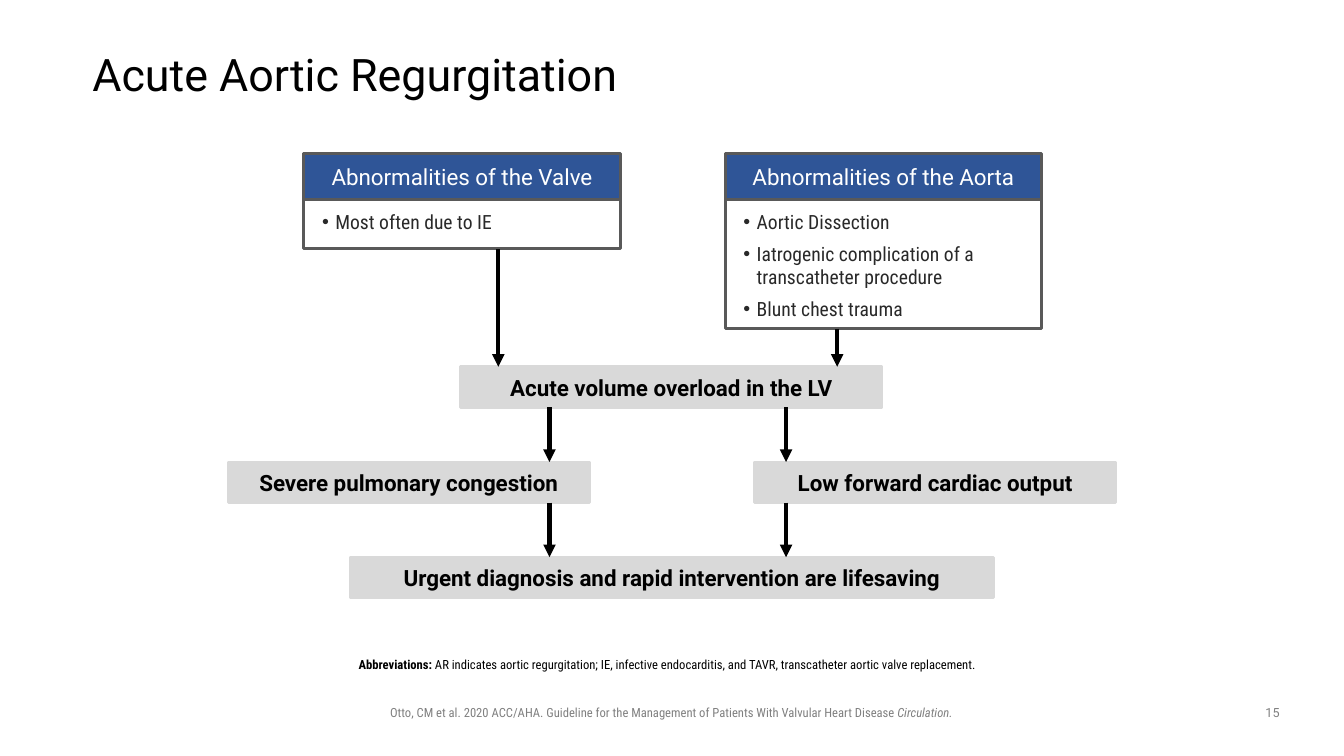
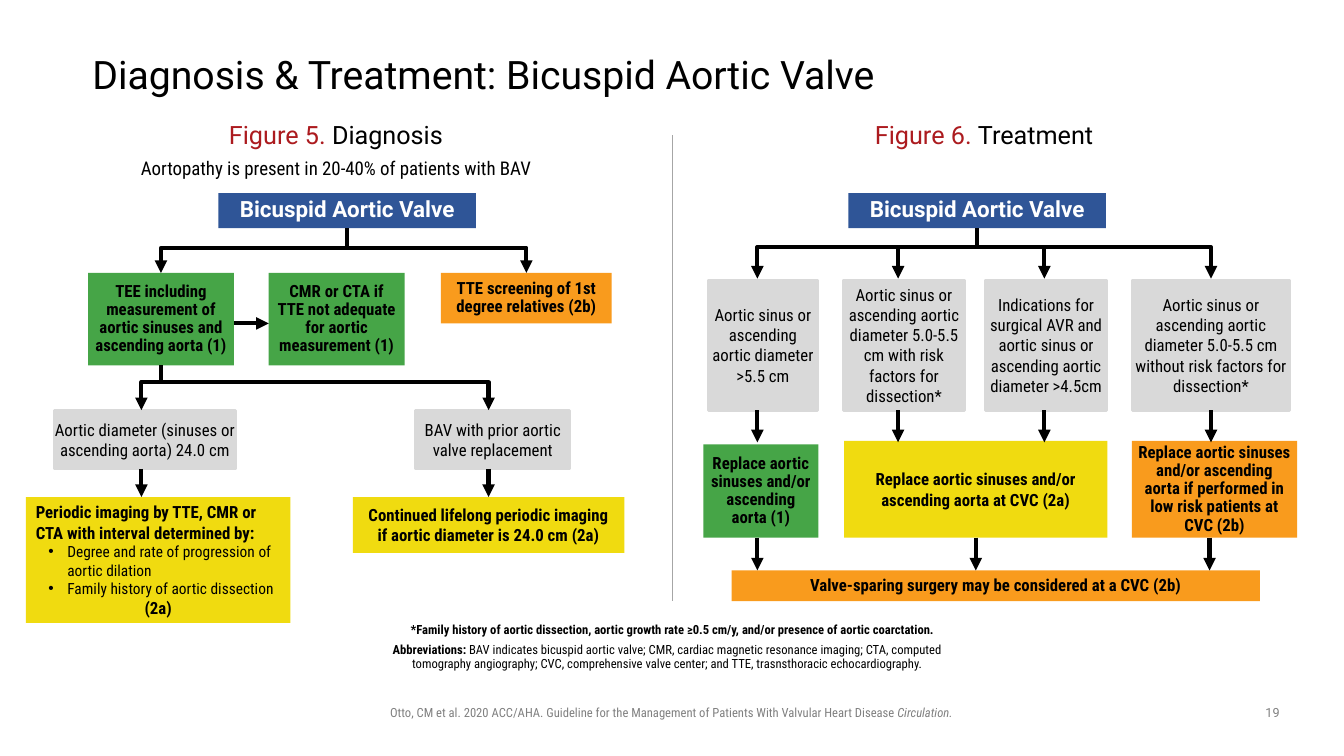
from lxml import etree
from pptx import Presentation
from pptx.dml.color import RGBColor
from pptx.enum.shapes import MSO_CONNECTOR, MSO_SHAPE
from pptx.enum.text import MSO_ANCHOR, PP_ALIGN
from pptx.oxml.ns import qn
from pptx.util import Pt

RECT = MSO_SHAPE.RECTANGLE
STRAIGHT = MSO_CONNECTOR.STRAIGHT
MID, TOP = MSO_ANCHOR.MIDDLE, MSO_ANCHOR.TOP
LEFT, MIDST = PP_ALIGN.LEFT, PP_ALIGN.CENTER

HUES = {
    "black": "000000", "white": "FFFFFF", "ink": "292929", "edge": "595959",
    "gray": "D9D9D9", "rule": "A6A6A6", "foot": "808080", "red": "AC1B1F",
    "blue": "2F5597", "green": "46A547", "gold": "F0DB10", "orange": "F99B1D",
}
WIDE, SLIM = "Roboto", "Roboto Condensed"


def style(name, size, hue="black", bold=False, italic=False, align=MIDST,
          dense=False, after=0, hang=None):
    return {
        "font": {"name": name, "size": Pt(size), "bold": bold, "italic": italic},
        "hue": hue,
        "par": {"alignment": align, "line_spacing": 0.9 if dense else 1.0,
                "space_after": Pt(after)},
        "hang": hang,
    }


STYLES = {
    "title": style(WIDE, 32, align=LEFT, dense=True),
    "long": style(WIDE, 28, align=LEFT, dense=True),
    "foot": style(SLIM, 9, "foot"),
    "cite": style(SLIM, 9, "foot", italic=True),
    "page": style(WIDE, 9, "foot"),
    "note": style(SLIM, 9, dense=True),
    "key": style(SLIM, 9, bold=True),
    "head": style(WIDE, 16, "white", dense=True),
    "root": style(WIDE, 16, "white", bold=True, dense=True),
    "item": style(SLIM, 14, "ink", align=LEFT, after=6, hang=9.5),
    "step": style(WIDE, 16, bold=True),
    "label": style(WIDE, 18, "red"),
    "name": style(WIDE, 18),
    "lead": style(SLIM, 13.5),
    "plain": style(SLIM, 12),
    "bold": style(SLIM, 12, bold=True),
    "tight": style(SLIM, 12, bold=True, dense=True),
    "start": style(SLIM, 12, bold=True, align=LEFT),
    "point": style(SLIM, 11, align=LEFT, hang=13.5),
}


def tint(hue):
    return RGBColor.from_string(HUES[hue])


def assign(thing, vals):
    for key, val in vals.items():
        setattr(thing, key, val)


class Deck:
    def __init__(self):
        self.file = Presentation()
        assign(self.file, {"slide_width": Pt(960), "slide_height": Pt(540)})

    def page(self, title, look, num):
        self.slide = self.file.slides.add_slide(self.file.slide_layouts[6])
        self.forms = self.slide.shapes
        self.boxes = []
        self.text((66, 29, 828, 52), look, title, pad=(0, 0, 0, 0), anchor=MID)
        self.text((228, 500, 503, 18), "foot", (
            "foot",
            "Otto, CM et al. 2020 ACC/AHA. Guideline for the Management of "
            "Patients With Valvular Heart Disease ",
            ("Circulation.", "cite")))
        self.text((894, 500, 30, 19), "page", num)

    def fill(self, frame, look, paras, pad, anchor):
        sides = ("margin_left", "margin_top", "margin_right", "margin_bottom")
        assign(frame, {"word_wrap": True, "vertical_anchor": anchor})
        assign(frame, {side: Pt(val) for side, val in zip(sides, pad)})
        for i, para in enumerate(paras):
            kind, *runs = (look, para) if isinstance(para, str) else para
            par = frame.add_paragraph() if i else frame.paragraphs[0]
            base = STYLES[kind]
            assign(par, base["par"])
            if base["hang"]:
                self.dot(par, base["hang"])
            for run in runs:
                words, kin = (run, kind) if isinstance(run, str) else run
                for j, line in enumerate(words.split("\n")):
                    if j:
                        par.add_line_break()
                    part = par.add_run()
                    part.text = line
                    assign(part.font, STYLES[kin]["font"])
                    part.font.color.rgb = tint(STYLES[kin]["hue"])

    def dot(self, par, hang):
        props = par._p.get_or_add_pPr()
        props.set("marL", str(Pt(22.5)))
        props.set("indent", str(-Pt(hang)))
        etree.SubElement(props, qn("a:buFont")).set("typeface", "Arial")
        etree.SubElement(props, qn("a:buChar")).set("char", "•")

    def text(self, at, look, *paras, pad=(7.2, 3.6, 7.2, 3.6), anchor=TOP):
        box = self.forms.add_textbox(*map(Pt, at))
        self.fill(box.text_frame, look, paras, pad, anchor)

    def note(self, at, words):
        self.text(at, "note", ("note", ("Abbreviations: ", "key"), words),
                  pad=(0, 3.6, 7.2, 3.6))

    def box(self, at, hue, look, *paras, edge=None, pad=(0, 0, 0, 0), anchor=MID):
        box = self.forms.add_shape(RECT, *map(Pt, at))
        box.shadow.inherit = False
        box.fill.solid()
        box.fill.fore_color.rgb = tint(hue)
        if edge:
            self.stroke(box, edge, 2)
        else:
            box.line.fill.background()
        self.fill(box.text_frame, look, paras, pad, anchor)
        self.boxes.append(box)

    def gray(self, at, look, words):
        self.box(at, "gray", look, words, edge="gray")

    def card(self, x, high, head, *items):
        self.box((x, 109.5, 226, 35), "blue", "head", head, edge="edge")
        self.box((x, 142.5, 226, high), "white", "item", *items,
                 edge="edge", pad=(0, 7.2, 0, 0), anchor=TOP)

    def stroke(self, form, hue, width, tip=False):
        form.line.color.rgb = tint(hue)
        form.line.width = Pt(width)
        if tip:
            line = form._element.spPr.find(qn("a:ln"))
            etree.SubElement(line, qn("a:tailEnd")).set("type", "triangle")

    def line(self, x, y, to_x, to_y, hue="black", width=3, tip=True):
        ends = [(Pt(x), Pt(y)), (Pt(to_x), Pt(to_y))]
        link = self.forms.add_connector(STRAIGHT, *ends[0], *ends[1])
        self.stroke(link, hue, width, tip)
        etree.SubElement(link._element.spPr, qn("a:effectLst"))
        for end, join in zip(ends, (link.begin_connect, link.end_connect)):
            self.join(end, join)

    def join(self, end, join):
        for box in self.boxes:
            x, y, w, h = box.left, box.top, box.width, box.height
            sites = ((x + w // 2, y), (x, y + h // 2),
                     (x + w // 2, y + h), (x + w, y + h // 2))
            for site, spot in enumerate(sites):
                if max(abs(a - b) for a, b in zip(end, spot)) < Pt(0.5):
                    join(box, site)
                    return

    def drop(self, y, to_y, *spots):
        for x in spots:
            self.line(x, y, x, to_y)

    def fork(self, x, y, bend, to_y, *spots):
        self.line(x, y, x, bend, tip=False)
        for spot in spots:
            path = self.forms.build_freeform(Pt(x), Pt(bend), scale=1.0)
            path.add_line_segments(
                [(Pt(spot), Pt(bend)), (Pt(spot), Pt(to_y))], close=False)
            form = path.convert_to_shape()
            form.shadow.inherit = False
            form.fill.background()
            self.stroke(form, "black", 3, tip=True)


def acute(deck):
    deck.page("Acute Aortic Regurgitation", "title", "15")
    deck.note((66, 467, 828, 22),
              "AR indicates aortic regurgitation; IE, infective endocarditis, and "
              "TAVR, transcatheter aortic valve replacement.")
    deck.card(217, 35, "Abnormalities of the Valve", "Most often due to IE")
    deck.card(518, 92, "Abnormalities of the Aorta", "Aortic Dissection",
              "Iatrogenic complication of a transcatheter procedure",
              "Blunt chest trauma")
    for x, row, w, words in (
            (329, 0, 301, "Acute volume overload in the LV"),
            (163, 1, 258, "Severe pulmonary congestion"),
            (539, 1, 258, "Low forward cardiac output"),
            (250, 2, 460, "Urgent diagnosis and rapid intervention are lifesaving")):
        deck.gray((x, 262 + 68 * row, w, 29), "step", words)
    deck.drop(178, 262, 356)
    deck.drop(235, 262, 598)
    for y in (291, 359):
        deck.drop(y, y + 39, 392.5, 561.5)


def test(deck):
    deck.text((91, 104.5, 298, 33), "lead",
              "Aortopathy is present in 20-40% of patients with BAV",
              pad=(7.2, 7.2, 7.2, 0))
    deck.box((315, 195, 122, 36), "orange", "tight",
             "TTE screening of 1st degree relatives (2b)")
    deck.box((63, 195, 104, 66), "green", "tight",
             "TEE including measurement of aortic sinuses and ascending aorta (1)")
    deck.box((192, 195, 97, 66), "green", "tight",
             "CMR or CTA if\nTTE not adequate for aortic measurement (1)")
    deck.gray((39, 293, 129, 42), "plain",
              "Aortic diameter (sinuses or ascending aorta) 24.0 cm")
    deck.gray((297, 293, 110, 42), "plain",
              "BAV with prior aortic valve replacement")
    pad = (7.2, 7.2, 7.2, 7.2)
    deck.box((18.5, 355, 189, 90), "gold", "start",
             "Periodic imaging by TTE, CMR or CTA with interval determined by:",
             ("point", "Degree and rate of progression of aortic dilation"),
             ("point", "Family history of aortic dissection"),
             ("bold", "(2a)"), pad=pad)
    deck.box((252, 355, 194, 40), "gold", "bold",
             "Continued lifelong periodic imaging if aortic diameter is 24.0 cm (2a)",
             pad=pad)
    deck.fork(248, 163, 177, 195, 115, 376)
    deck.line(167, 231, 192, 231)
    deck.fork(115, 261, 273, 293, 101, 349)
    deck.drop(335, 355, 101, 349)


def treat(deck):
    for x, w, words in (
            (506, 78, "Aortic sinus or ascending aortic diameter >5.5 cm"),
            (602.5, 86.5, "Aortic sinus or ascending aortic diameter 5.0-5.5 cm "
                          "with risk factors for dissection*"),
            (704, 86.5, "Indications for surgical AVR and aortic sinus or "
                        "ascending aortic diameter >4.5cm"),
            (809, 112, "Aortic sinus or ascending aortic diameter 5.0-5.5 cm "
                       "without risk factors for dissection*")):
        deck.gray((x, 200, w, 93), "plain", words)
    deck.box((502.5, 317.5, 82, 66.5), "green", "tight",
             "Replace aortic sinuses and/or ascending\naorta (1)")
    deck.box((603, 315, 188, 69), "gold", "bold",
             "Replace aortic sinuses and/or ascending aorta at CVC (2a)",
             pad=(7.2, 7.2, 7.2, 7.2))
    deck.box((808.5, 315, 118, 69), "orange", "tight",
             "Replace aortic sinuses and/or ascending\naorta if performed in\n"
             "low risk patients at\nCVC (2b)")
    deck.box((522.5, 407.5, 377.5, 22), "orange", "tight",
             "Valve-sparing surgery may be considered at a CVC (2b)")
    stems = (541, 641.5, 746, 865)
    deck.fork(698, 163, 176.5, 199, *stems)
    deck.drop(293, 316, *stems)
    deck.drop(384, 407.5, 541, 697, 864)


def valve(deck):
    deck.page("Diagnosis & Treatment: Bicuspid Aortic Valve", "long", "19")
    for x, w, label, name, root in ((0, 480, "Figure 5. ", "Diagnosis", 156),
                                    (480, 446, "Figure 6. ", "Treatment", 606)):
        deck.text((x, 81.5, w, 29), "label", ("label", label, (name, "name")))
        deck.box((root, 138, 184, 25), "blue", "root", "Bicuspid Aortic Valve")
    deck.line(480, 96.5, 480, 429, "rule", 0.5, tip=False)
    deck.text((240, 440.5, 480, 18), "key",
              "*Family history of aortic dissection, aortic growth rate ≥0.5 cm/y, "
              "and/or presence of aortic coarctation.")
    deck.note((265.5, 456.5, 429, 22),
              "BAV indicates bicuspid aortic valve; CMR, cardiac magnetic resonance "
              "imaging; CTA, computed tomography angiography; CVC, comprehensive "
              "valve center; and TTE, trasnsthoracic echocardiography.")
    test(deck)
    treat(deck)


def main():
    deck = Deck()
    acute(deck)
    valve(deck)
    deck.file.save("out.pptx")


if __name__ == "__main__":
    main()
